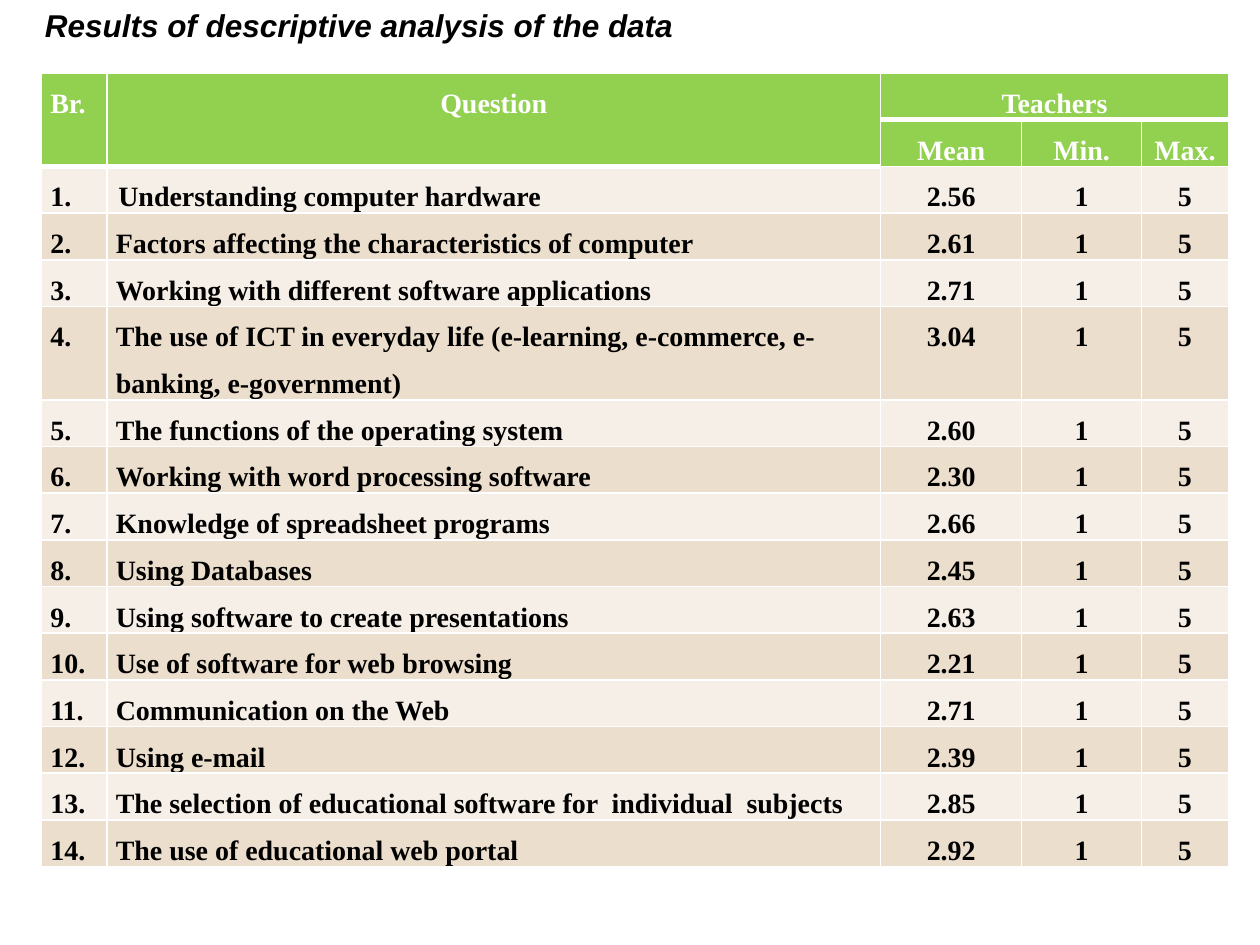
from dataclasses import dataclass

from lxml import etree
from pptx import Presentation
from pptx import util as u
from pptx.dml.color import RGBColor
from pptx.enum import text
from pptx.oxml import ns


@dataclass(frozen=True)
class Theme:
    header: str = "92D050"
    light: str = "F6EFE7"
    dark: str = "ECDECC"
    white: str = "FFFFFF"
    ink: str = "000000"
    title_font: str = "Arial"
    table_font: str = "Times New Roman"
    title_size: int = 18
    table_size: int = 16
    thin: int = 1
    thick: int = 3


theme = Theme()
align = text.PP_ALIGN


def add_span(para, words, font, size, color):
    span = para.add_run()
    span.text = words
    span.font.name = font
    span.font.size = u.Pt(size)
    span.font.bold = True
    span.font.color.rgb = RGBColor.from_string(color)
    return span


def add_border(cell, side, width):
    line = etree.SubElement(cell._tc.get_or_add_tcPr(), ns.qn(f"a:ln{side}"), w=str(u.Pt(width)))
    fill = etree.SubElement(line, ns.qn("a:solidFill"))
    etree.SubElement(fill, ns.qn("a:srgbClr"), val=theme.white)


questions = [
    ("Understanding computer hardware", "2.56"),
    ("Factors affecting the characteristics of computer", "2.61"),
    ("Working with different software applications", "2.71"),
    ("The use of ICT in everyday life (e-learning, e-commerce, e-banking, e-government)", "3.04"),
    ("The functions of the operating system", "2.60"),
    ("Working with word processing software", "2.30"),
    ("Knowledge of spreadsheet programs", "2.66"),
    ("Using Databases", "2.45"),
    ("Using software to create presentations", "2.63"),
    ("Use of software for web browsing", "2.21"),
    ("Communication on the Web", "2.71"),
    ("Using e-mail", "2.39"),
    ("The selection of educational software for  individual  subjects", "2.85"),
    ("The use of educational web portal", "2.92"),
]
rows = [["Br.", "Question", "Teachers", "", ""], ["", "", "Mean", "Min.", "Max."]]
for number, (question, mean) in enumerate(questions, start=1):
    rows.append([f"{number}.", question, mean, "1", "5"])
column_widths = [0.52, 6.14, 1.12, 0.95, 0.69]
header_rows = 2
label_columns = 2

deck = Presentation()
deck.slide_width = u.Inches(10)
deck.slide_height = u.Inches(7.5)
page = deck.slides.add_slide(deck.slide_layouts[6])

frame = page.shapes.add_table(
    len(rows), len(column_widths), u.Inches(0.33), u.Inches(0.58), u.Inches(9.42), u.Inches(6.8)
)
table = frame.table
for column, width in zip(table.columns, column_widths):
    column.width = u.Inches(width)
for index, row in enumerate(table.rows):
    row.height = u.Inches(0.3 if index == 1 else 0.26)
frame.height = u.Inches(6.8)

for column in range(label_columns):
    table.cell(0, column).merge(table.cell(1, column))
table.cell(0, label_columns).merge(table.cell(0, len(column_widths) - 1))

for r, values in enumerate(rows):
    is_header = r < header_rows
    for c, words in enumerate(values):
        cell = table.cell(r, c)
        cell.margin_left = cell.margin_right = u.Inches(0.07)
        cell.margin_top = cell.margin_bottom = 0
        thick_edges = {1, 2} if c < label_columns else {1}
        add_border(cell, "L", theme.thin)
        add_border(cell, "R", theme.thin)
        add_border(cell, "T", theme.thick if r in thick_edges else theme.thin)
        add_border(cell, "B", theme.thick if r + 1 in thick_edges else theme.thin)
        cell.fill.solid()
        band = theme.header if is_header else (theme.light, theme.dark)[r % 2]
        cell.fill.fore_color.rgb = RGBColor.from_string(band)
        if not words:
            continue
        para = cell.text_frame.paragraphs[0]
        para.line_spacing = 1.5
        if c >= label_columns or (is_header and c == 1):
            para.alignment = align.CENTER
        elif is_header or (c == 1 and r >= len(rows) - 2):
            para.alignment = align.JUSTIFY
        else:
            para.alignment = align.LEFT
        add_span(para, words, theme.table_font, theme.table_size, theme.white if is_header else theme.ink)

first_question = table.cell(header_rows, 1).text_frame.paragraphs[0]
first_question._p.get_or_add_pPr().set("indent", str(u.Inches(0.02)))

box = page.shapes.add_textbox(u.Inches(0.23), u.Inches(0), u.Inches(5.24), u.Inches(0.4))
box.text_frame.word_wrap = False
box.text_frame.auto_size = text.MSO_AUTO_SIZE.SHAPE_TO_FIT_TEXT
box.text_frame.vertical_anchor = text.MSO_ANCHOR.MIDDLE
para = box.text_frame.paragraphs[0]
para.alignment = align.CENTER
title = add_span(
    para, "Results of descriptive analysis of the data", theme.title_font, theme.title_size, theme.ink
)
title.font.italic = True

deck.save("out.pptx")
